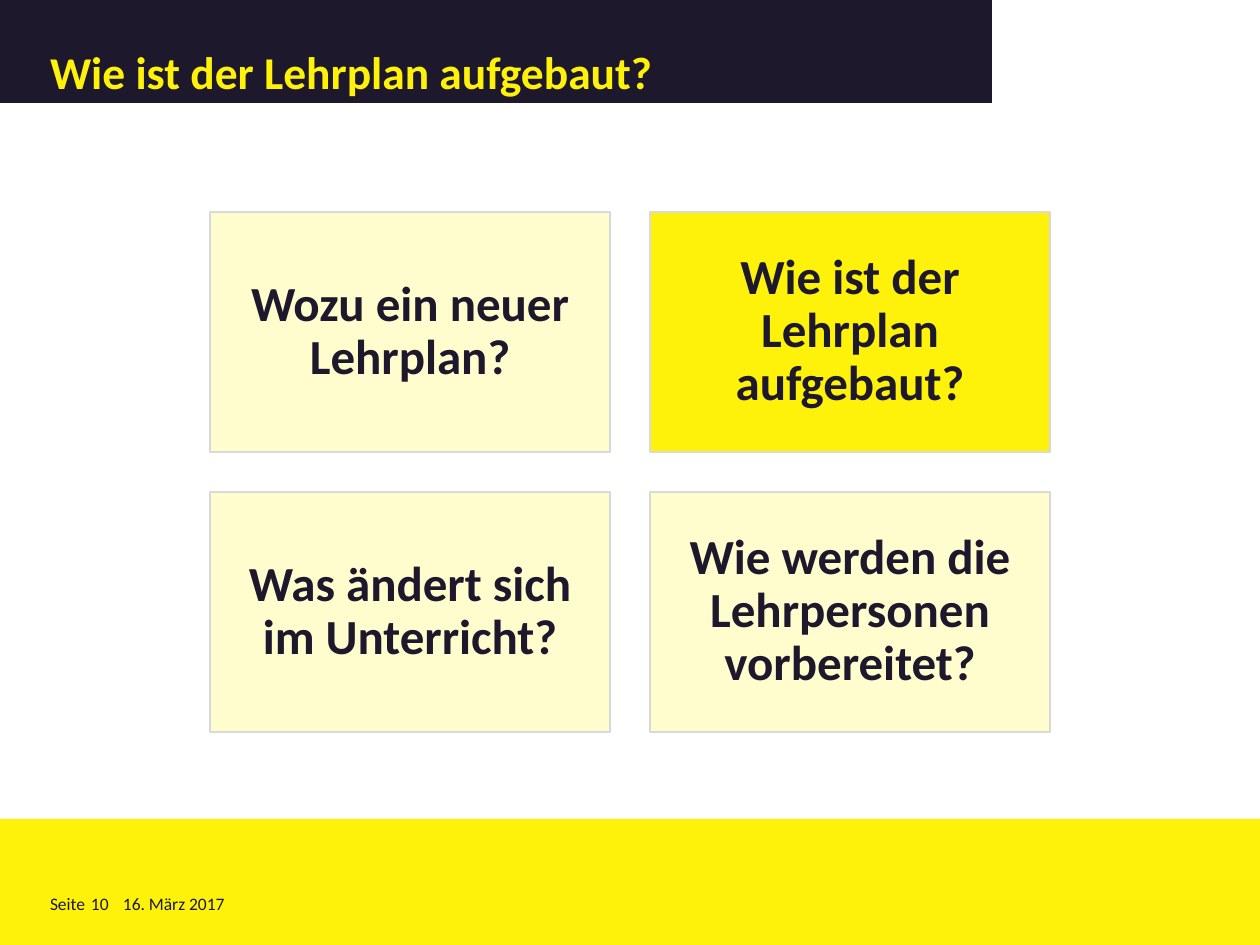
from dataclasses import dataclass

from pptx import Presentation
from pptx.dml.color import RGBColor
from pptx.enum import shapes, text
from pptx.util import Emu, Pt

EMU_PER_PX = 914400 / 126


@dataclass(frozen=True)
class Theme:
    font: str = "Calibri"
    dark: str = "1D182C"
    yellow: str = "FEF20A"
    pale: str = "FFFCCE"
    border: str = "D9D9D9"
    title_size: int = 26
    card_size: int = 28
    footer_size: int = 10


THEME = Theme()


def px(length):
    return Emu(round(length * EMU_PER_PX))


def set_attributes(target, values):
    for name, value in values.items():
        setattr(target, name, value)


def place(part, box):
    set_attributes(part, dict(zip(("left", "top", "width", "height"), map(px, box))))


def paint(part, color):
    part.fill.solid()
    part.fill.fore_color.rgb = RGBColor.from_string(color)


def write(part, wording, size, color, margins=(0, 0, 0, 0), bold=False,
          anchor=text.MSO_ANCHOR.TOP, align=text.PP_ALIGN.LEFT, spacing=1.0):
    frame = part.text_frame
    frame.text = wording
    set_attributes(frame, {"word_wrap": True, "auto_size": text.MSO_AUTO_SIZE.NONE,
                           "vertical_anchor": anchor})
    sides = ("margin_left", "margin_top", "margin_right", "margin_bottom")
    set_attributes(frame, dict(zip(sides, map(px, margins))))
    paragraph = frame.paragraphs[0]
    set_attributes(paragraph, {"alignment": align, "line_spacing": spacing})
    font = paragraph.runs[0].font
    set_attributes(font, {"name": THEME.font, "size": Pt(size), "bold": bold})
    font.color.rgb = RGBColor.from_string(color)


def add_panel(slide, box, color):
    panel = slide.shapes.add_shape(shapes.MSO_SHAPE.RECTANGLE, *map(px, box))
    panel.shadow.inherit = False
    paint(panel, color)
    panel.line.fill.background()
    return panel


def add_heading(slide, box, wording):
    heading = slide.shapes.title
    place(heading, box)
    paint(heading, THEME.dark)
    write(heading, wording, THEME.title_size, THEME.yellow, (50, 10, 10, 5),
          bold=True, anchor=text.MSO_ANCHOR.BOTTOM, spacing=0.8)


def add_footer(slide, box, page, date):
    left, top, width, height = box
    add_panel(slide, box, THEME.yellow)
    for wording, offset, extent in (("Seite", 50, 44), (page, 91, 32), (date, 123, 287)):
        entry = slide.shapes.add_textbox(px(left + offset), px(top + 74), px(extent), px(21))
        write(entry, wording, THEME.footer_size, THEME.dark)


def add_questions(slide, box, questions, current, columns=2, gap=40):
    left, top, width, height = box
    rows = len(questions) // columns
    card_width = (width - gap * (columns - 1)) // columns
    card_height = (height - gap * (rows - 1)) // rows
    for index, question in enumerate(questions):
        row, column = divmod(index, columns)
        card_box = (left + column * (card_width + gap), top + row * (card_height + gap),
                    card_width, card_height)
        card = add_panel(slide, card_box, THEME.yellow if question == current else THEME.pale)
        card.line.color.rgb = RGBColor.from_string(THEME.border)
        card.line.width = Pt(1)
        write(card, question, THEME.card_size, THEME.dark, (15, 15, 15, 15), bold=True,
              anchor=text.MSO_ANCHOR.MIDDLE, align=text.PP_ALIGN.CENTER, spacing=0.9)


def main():
    deck = Presentation()
    set_attributes(deck, {"slide_width": px(1260), "slide_height": px(945)})
    slide = deck.slides.add_slide(deck.slide_layouts[5])
    topic = "Wie ist der Lehrplan aufgebaut?"
    questions = ("Wozu ein neuer Lehrplan?", topic, "Was ändert sich im Unterricht?",
                 "Wie werden die Lehrpersonen vorbereitet?")
    add_heading(slide, (0, 0, 992, 103), topic)
    add_footer(slide, (0, 819, 1260, 126), "10", "16. März 2017")
    add_questions(slide, (210, 212, 840, 520), questions, topic)
    deck.save("out.pptx")


if __name__ == "__main__":
    main()
